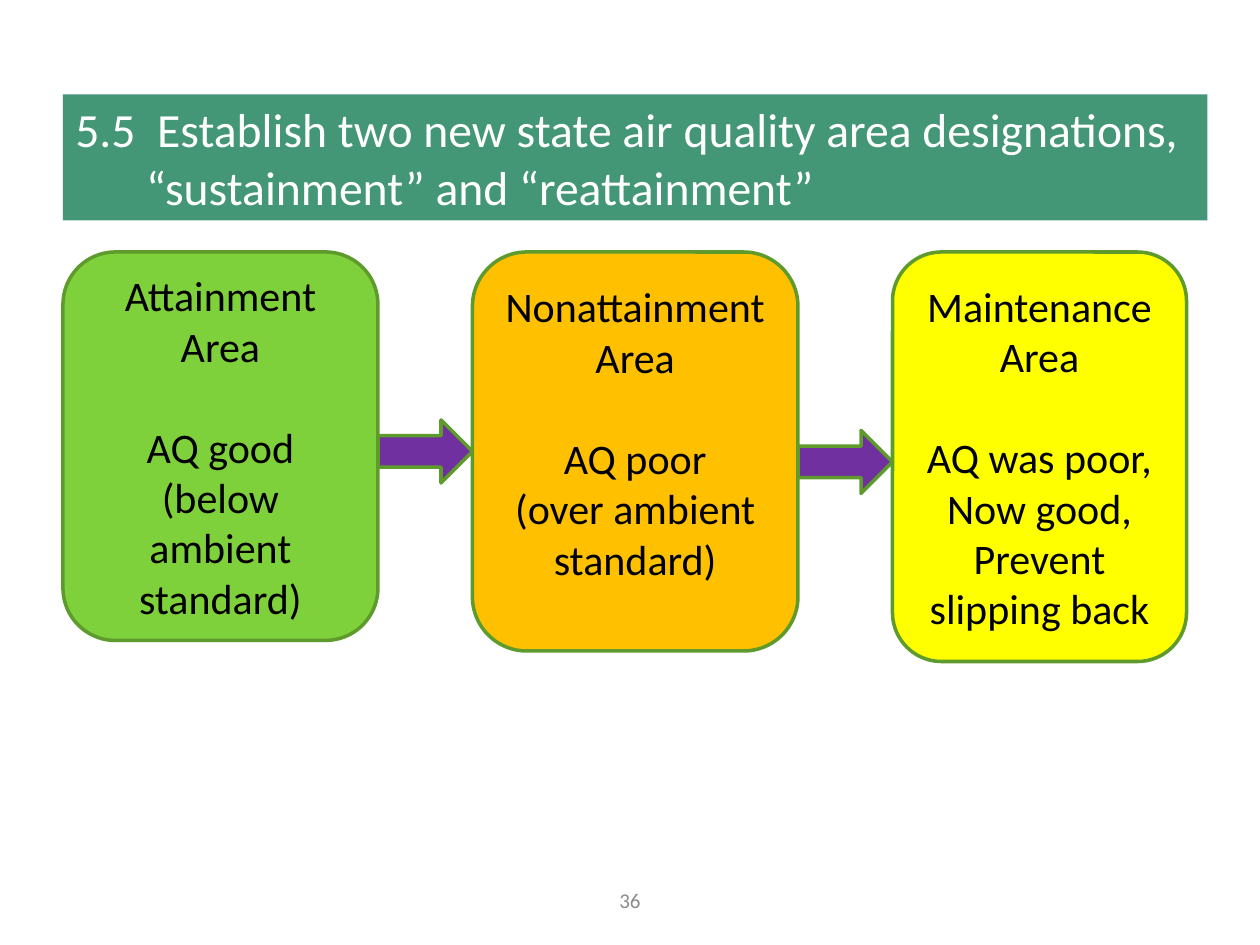
"""Build the air quality area designations slide."""
from dataclasses import dataclass
from itertools import pairwise

from pptx import Presentation
from pptx.dml.color import RGBColor
from pptx.enum.shapes import MSO_SHAPE
from pptx.enum.text import MSO_ANCHOR, PP_ALIGN
from pptx.util import Pt

RECT, ROUNDED, ARROW = MSO_SHAPE.RECTANGLE, MSO_SHAPE.ROUNDED_RECTANGLE, MSO_SHAPE.RIGHT_ARROW
MIDDLE = MSO_ANCHOR.MIDDLE
LEFT, CENTER = PP_ALIGN.LEFT, PP_ALIGN.CENTER

FONT = "Calibri"
COLORS = {
    "banner": "439777",
    "banner_text": "FFFFFF",
    "attainment": "7FD13B",
    "nonattainment": "FFC000",
    "maintenance": "FFFF00",
    "outline": "5E9B2C",
    "arrow": "7030A0",
    "text": "000000",
    "number": "8C8C8C",
}
MARGIN = 36
AREA_TOP = 144
ARROW_TOP, ARROW_HEIGHT, ARROW_STEP = 240, 36, 6
LINE_GAP = 29


@dataclass(frozen=True)
class Area:
    """One designation box: its heading, its notes and its place."""

    color: str
    left: float
    width: float
    height: float
    heading: str
    notes: tuple[str, ...]
    bottom_inset: float = 3.6

    @property
    def right(self) -> float:
        """Return the right edge."""
        return self.left + self.width


AREAS = (
    Area("attainment", MARGIN, 180, 222, "Attainment Area",
         ("AQ good", "(below ambient standard)")),
    Area("nonattainment", 270, 186, 228, "Nonattainment Area",
         ("AQ poor", "(over ambient standard)"), bottom_inset=25.6),
    Area("maintenance", 510, 168, 234, "Maintenance Area",
         ("AQ was poor,", "Now good,", "Prevent slipping back")),
)


def rgb(name: str) -> RGBColor:
    """Look up a named colour."""
    return RGBColor.from_string(COLORS[name])


def add_block(s, kind, left: float, top: float, width: float, height: float,
              fill: str, outline: str | None = None):
    """Draw a flat filled shape, with an outline if one is named."""
    sp = s.shapes.add_shape(kind, Pt(left), Pt(top), Pt(width), Pt(height))
    sp.shadow.inherit = False
    sp.fill.solid()
    sp.fill.fore_color.rgb = rgb(fill)
    if outline:
        sp.line.color.rgb = rgb(outline)
        sp.line.width = Pt(2)
    else:
        sp.line.fill.background()
    return sp


def write(p, text: str, size: float, color: str, align=CENTER) -> None:
    """Put one run of text into a paragraph."""
    p.alignment = align
    r = p.add_run()
    r.text = text
    r.font.name = FONT
    r.font.size = Pt(size)
    r.font.color.rgb = rgb(color)


def prepare(sp):
    """Return the wrapped, vertically centred text frame of a shape."""
    tf = sp.text_frame
    tf.word_wrap = True
    tf.vertical_anchor = MIDDLE
    return tf


def add_banner(s) -> None:
    """Draw the title banner with its hanging indent."""
    sp = add_block(s, RECT, MARGIN, 54, 654, 72, "banner")
    p = prepare(sp).paragraphs[0]
    write(p, "5.5  Establish two new state air quality area designations, "
             "“sustainment” and “reattainment”", 27.2, "banner_text", LEFT)
    p.space_after = Pt(6)
    pPr = p._p.get_or_add_pPr()
    pPr.set("marL", str(Pt(40.5)))
    pPr.set("indent", str(Pt(-40.5)))


def add_area(s, area: Area) -> None:
    """Draw a designation box with a gap between heading and notes."""
    sp = add_block(s, ROUNDED, area.left, AREA_TOP, area.width, area.height,
                   area.color, "outline")
    tf = prepare(sp)
    tf.margin_bottom = Pt(area.bottom_inset)
    write(tf.paragraphs[0], area.heading, 24, "text")
    for i, note in enumerate(area.notes):
        p = tf.add_paragraph()
        write(p, note, 24, "text")
        if i == 0:
            p.space_before = Pt(LINE_GAP)


def add_page_number(s) -> None:
    """Write the page number at the foot."""
    sp = s.shapes.add_textbox(Pt(246), Pt(500), Pt(228), Pt(29))
    write(prepare(sp).paragraphs[0], "36", 12, "number")


def main() -> None:
    """Build and save the slide."""
    prs = Presentation()
    prs.slide_width, prs.slide_height = Pt(720), Pt(540)
    s = prs.slides.add_slide(prs.slide_layouts[6])
    add_page_number(s)
    add_banner(s)
    for area in AREAS:
        add_area(s, area)
    for i, (a, b) in enumerate(pairwise(AREAS)):
        add_block(s, ARROW, a.right, ARROW_TOP + i * ARROW_STEP,
                  b.left - a.right, ARROW_HEIGHT, "arrow", "outline")
    prs.save("out.pptx")


if __name__ == "__main__":
    main()
